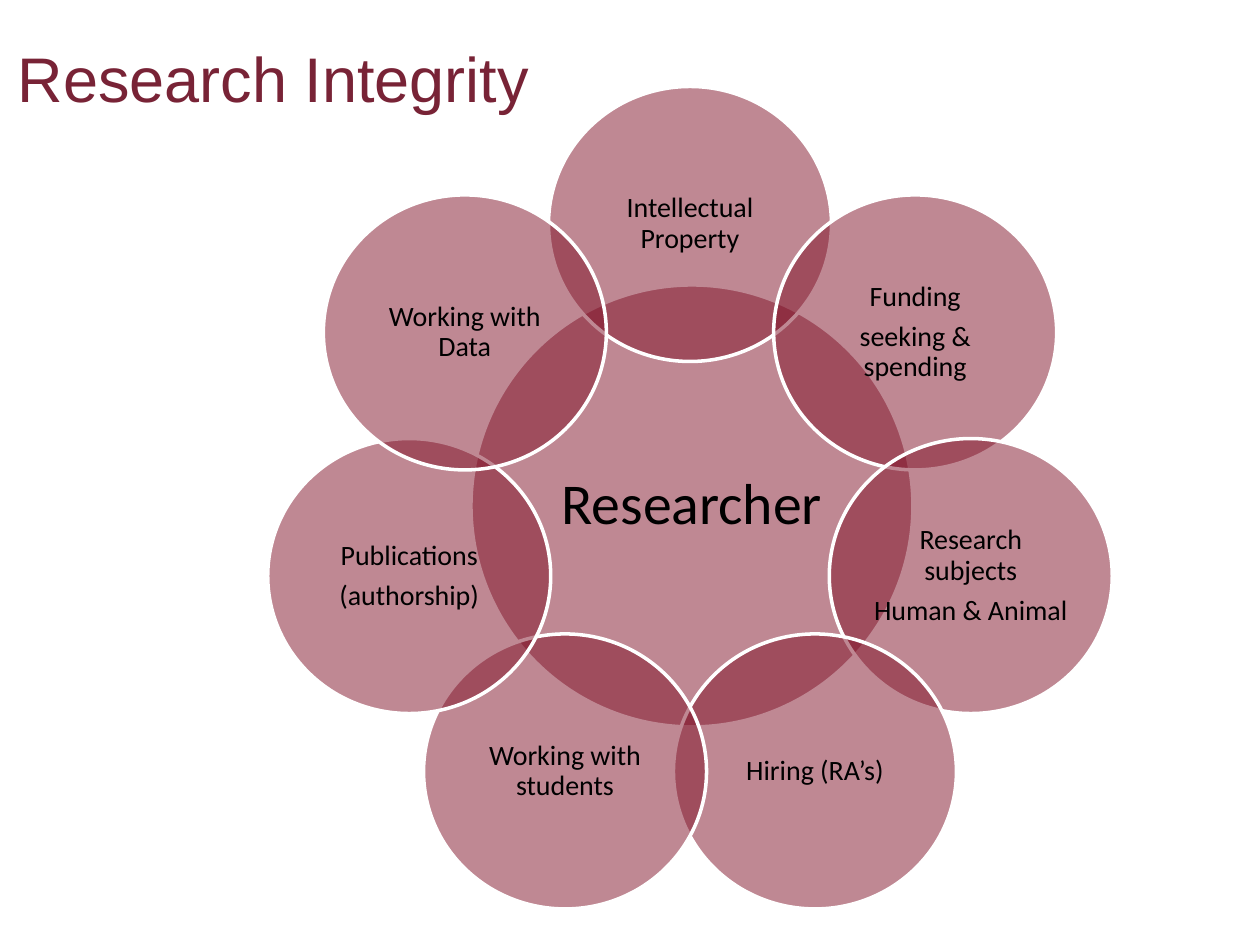
"""Build the Research Integrity slide: a ring of seven petals around a central disc."""
from math import cos, pi, sin

from lxml import etree
from pptx import Presentation
from pptx.dml.color import RGBColor
from pptx.enum.shapes import MSO_SHAPE
from pptx.enum.text import MSO_ANCHOR, MSO_AUTO_SIZE, PP_ALIGN
from pptx.oxml.ns import qn
from pptx.util import Pt

OVAL = MSO_SHAPE.OVAL
TOP, MIDDLE = MSO_ANCHOR.TOP, MSO_ANCHOR.MIDDLE
LEFT, CENTER = PP_ALIGN.LEFT, PP_ALIGN.CENTER
FIXED = MSO_AUTO_SIZE.NONE
COLORS = {"petal": "801329", "line": "FFFFFF", "text": "000000", "title": "782336"}
SCALE = 914400 / 126


def px(n):
    return round(n * SCALE)


def style(run, font, size, color):
    run.font.name = font
    run.font.size = Pt(size)
    run.font.color.rgb = RGBColor.from_string(COLORS[color])


deck = Presentation()
deck.slide_width, deck.slide_height = px(1260), px(945)
slide = deck.slides.add_slide(deck.slide_layouts[5])

title = slide.shapes.title
title.left, title.top, title.width, title.height = px(5), px(26), px(1071), px(158)
frame = title.text_frame
frame.auto_size = FIXED
frame.vertical_anchor = TOP
frame.margin_top = px(14)
para = frame.paragraphs[0]
para.alignment = LEFT
run = para.add_run()
run.text = "Research Integrity"
style(run, "Arial", 36, "title")

labels = [
    ["Intellectual Property"],
    ["Funding", "seeking & spending"],
    ["Research subjects", "Human & Animal"],
    ["Hiring (RA’s)"],
    ["Working with students"],
    ["Publications", "(authorship)"],
    ["Working with Data"],
]
mid_x, mid_y, radius = 690, 512, 288
discs = [(692, 506, 442, 442, 33, 6, ["Researcher"])]
for i, lines in enumerate(labels):
    turn = 2 * pi * i / len(labels)
    x, y = mid_x + radius * sin(turn), mid_y - radius * cos(turn)
    discs.append((x, y, 283, 275, 16, 2, lines))

for x, y, wide, high, size, inset, lines in discs:
    disc = slide.shapes.add_shape(
        OVAL, px(x - wide / 2), px(y - high / 2), px(wide), px(high))
    disc.shadow.inherit = False
    disc.fill.solid()
    disc.fill.fore_color.rgb = RGBColor.from_string(COLORS["petal"])
    tint = disc.fill._xPr.find(qn("a:solidFill"))[0]
    etree.SubElement(tint, qn("a:alpha"), val="50000")
    disc.line.color.rgb = RGBColor.from_string(COLORS["line"])
    disc.line.width = Pt(2)
    frame = disc.text_frame
    frame.word_wrap = True
    frame.vertical_anchor = MIDDLE
    frame.margin_left = frame.margin_right = px(inset)
    frame.margin_top = frame.margin_bottom = px(inset)
    for n, line in enumerate(lines):
        para = frame.add_paragraph() if n else frame.paragraphs[0]
        para.alignment = CENTER
        para.line_spacing = 0.9
        para.space_after = Pt(size * 0.35)
        run = para.add_run()
        run.text = line
        style(run, "Calibri", size, "text")

deck.save("out.pptx")
